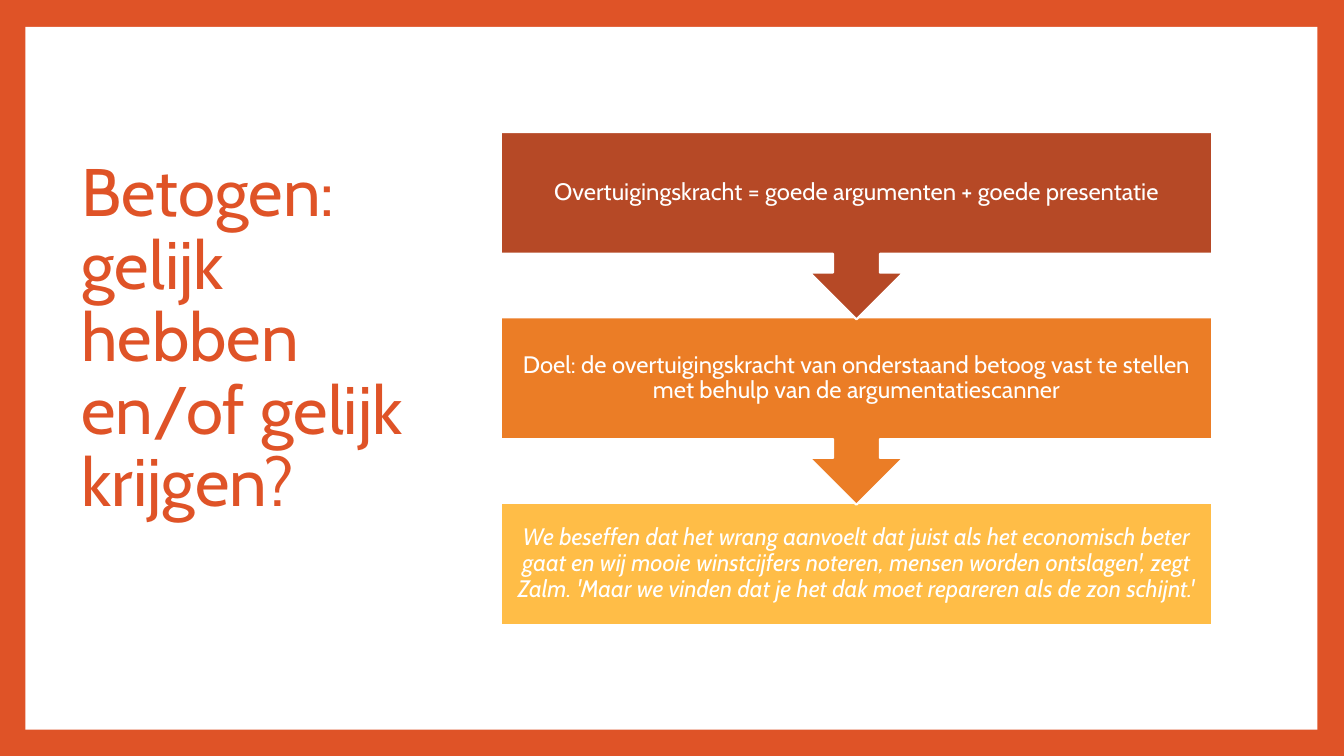
"""Build a slide on arguing: a title beside a three-step downward flow."""
from pptx import Presentation
from pptx.dml.color import RGBColor
from pptx.enum.shapes import MSO_SHAPE
from pptx.enum.text import MSO_ANCHOR, MSO_AUTO_SIZE, PP_ALIGN
from pptx.util import Cm, Pt

RECTANGLE = MSO_SHAPE.RECTANGLE
CALLOUT = MSO_SHAPE.DOWN_ARROW_CALLOUT
MIDDLE = MSO_ANCHOR.MIDDLE
NO_AUTOFIT = MSO_AUTO_SIZE.NONE
LEFT, CENTER = PP_ALIGN.LEFT, PP_ALIGN.CENTER
TITLE_ONLY = 5

FONT = "Cabin"
ORANGE_RED = RGBColor(0xDF, 0x53, 0x27)
RUST = RGBColor(0xB6, 0x49, 0x26)
ORANGE = RGBColor(0xEB, 0x7D, 0x26)
AMBER = RGBColor(0xFF, 0xBD, 0x47)
WHITE = RGBColor(0xFF, 0xFF, 0xFF)

TITLE = "Betogen: gelijk hebben en/of gelijk krijgen?"
STEPS = [
    ("Overtuigingskracht = goede argumenten + goede presentatie",
     RUST, CALLOUT, False),
    ("Doel: de overtuigingskracht van onderstaand betoog vast te stellen "
     "met behulp van de argumentatiescanner",
     ORANGE, CALLOUT, False),
    ("We beseffen dat het wrang aanvoelt dat juist als het economisch beter "
     "gaat en wij mooie winstcijfers noteren, mensen worden ontslagen', zegt "
     "Zalm. 'Maar we vinden dat je het dak moet repareren als de zon schijnt.'",
     AMBER, RECTANGLE, True),
]
STEP_LEFT, STEP_WIDTH = 12.62, 17.93
FIRST_TOP, STEP_PITCH = 3.33, 4.67
HEIGHTS = {CALLOUT: 4.72, RECTANGLE: 3.07}


def write_text(frame, text, size, color, align, italic=False):
    """Fill a text frame with one formatted, vertically centred paragraph."""
    frame.text = text
    frame.word_wrap = True
    frame.auto_size = NO_AUTOFIT
    frame.vertical_anchor = MIDDLE
    paragraph = frame.paragraphs[0]
    paragraph.alignment = align
    paragraph.line_spacing = 0.9
    font = paragraph.font
    font.name, font.size, font.italic = FONT, Pt(size), italic
    font.color.rgb = color


def add_block(slide, preset, left, top, width, height, color):
    """Add a filled shape without shadow or outline."""
    block = slide.shapes.add_shape(
        preset, Cm(left), Cm(top), Cm(width), Cm(height))
    block.shadow.inherit = False
    block.fill.solid()
    block.fill.fore_color.rgb = color
    block.line.fill.background()
    return block


def set_title(slide):
    """Place and format the title, raised by one line within its box."""
    title = slide.shapes.title
    title.left, title.top = Cm(1.8), Cm(1.7)
    title.width, title.height = Cm(9.35), Cm(15.57)
    write_text(title.text_frame, TITLE, 48, ORANGE_RED, LEFT)
    title.text_frame.margin_bottom = Cm(1.96)


def add_step(slide, index, text, color, preset, italic):
    """Add one step of the flow at its place in the column."""
    step = add_block(slide, preset, STEP_LEFT, FIRST_TOP + index * STEP_PITCH,
                     STEP_WIDTH, HEIGHTS[preset], color)
    step.line.color.rgb = WHITE
    step.line.width = Pt(1.5)
    frame = step.text_frame
    frame.margin_left = frame.margin_right = Cm(0.33)
    frame.margin_top = frame.margin_bottom = Cm(0.33)
    write_text(frame, text, 17, WHITE, CENTER, italic)


def main():
    """Build and save the slide."""
    presentation = Presentation()
    presentation.slide_width, presentation.slide_height = Cm(33.87), Cm(19.05)
    slide = presentation.slides.add_slide(
        presentation.slide_layouts[TITLE_ONLY])
    slide.background.fill.solid()
    slide.background.fill.fore_color.rgb = ORANGE_RED

    panel = add_block(slide, RECTANGLE, 0.64, 0.68, 32.56, 17.71, WHITE)
    slide.shapes.title.element.addprevious(panel.element)
    set_title(slide)
    for index, step in reversed(list(enumerate(STEPS))):
        add_step(slide, index, *step)
    presentation.save("out.pptx")


if __name__ == "__main__":
    main()
